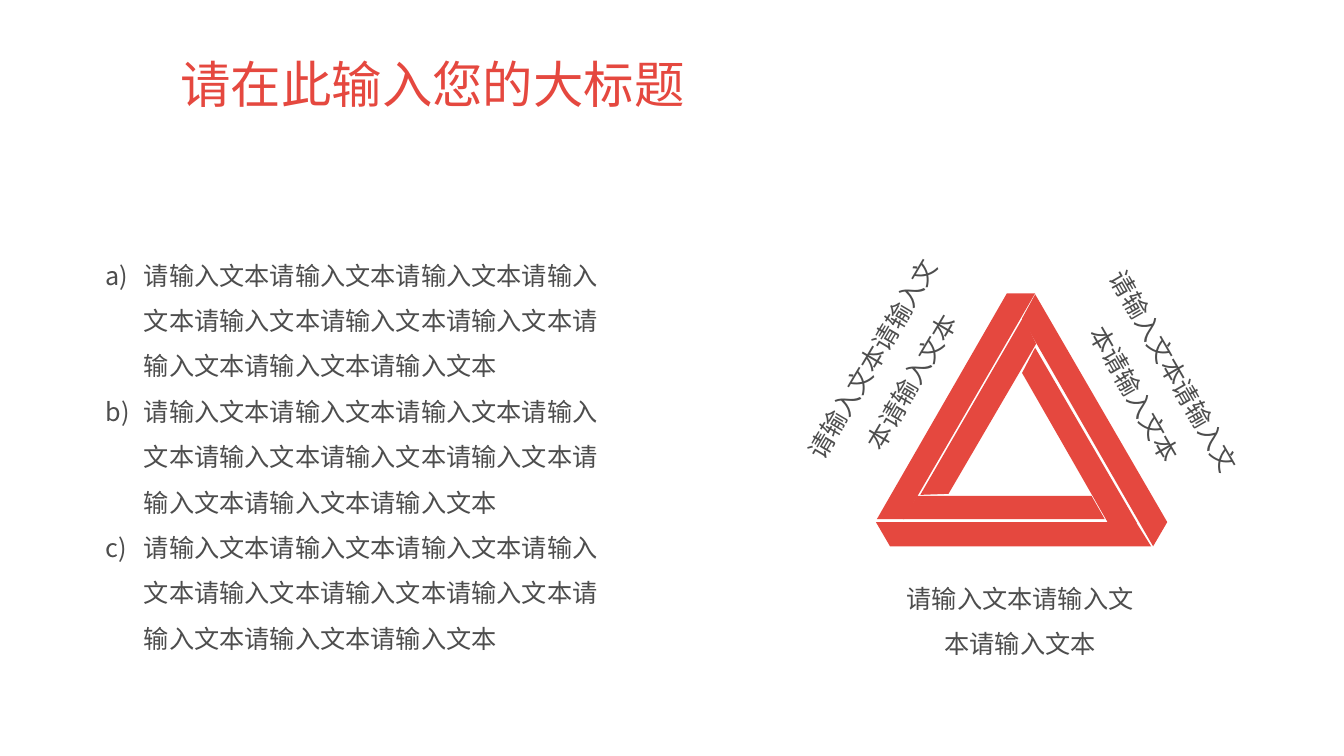
"""Build a slide with a lettered list beside an impossible triangle with three captions."""
from dataclasses import dataclass

from lxml import etree
from pptx import Presentation
from pptx import util as u
from pptx.dml.color import RGBColor
from pptx.enum import text
from pptx.oxml import ns

TITLE = "请在此输入您的大标题"
PHRASE = "请输入文本"
LIST_ITEMS = [PHRASE * 10] * 3
CAPTION = PHRASE * 3

SLIDE_SIZE = (7.5 * 16 / 9, 7.5)
TITLE_BOX = (1.69, 0.4, 10.44, 0.93)
LIST_BOX = (0.95, 2.22, 5.17, 4.47)
LIST_INDENT = 0.38
CAPTION_SIZE = (2.6, 1.15)
CAPTION_PLACES = [
    (8.82, 5.51, 0),
    (10.22, 3.18, 60),
    (7.48, 3.06, 300.5),
]
UNITS_PER_INCH = 100
TRIANGLE_BARS = {
    "left outer": [(1027, 291), (897, 515), (870, 515), (999, 291)],
    "bottom inner": [(910, 492), (1083, 492), (1096, 515), (896, 515)],
    "right outer": [(1027, 292), (1158, 518), (1144, 542), (1014, 316)],
    "left inner": [(1015, 315), (1028, 341), (941, 490), (913, 491)],
    "bottom outer": [(869, 518), (1127, 518), (1142, 542), (883, 542)],
    "right inner": [(1027, 345), (1128, 519), (1100, 520), (1014, 370)],
}


@dataclass(frozen=True)
class Theme:
    accent: RGBColor = RGBColor(0xE5, 0x48, 0x3F)
    body: RGBColor = RGBColor(0x4D, 0x4D, 0x4D)
    font: str = "Noto Sans CJK SC"
    title_size: int = 36
    body_size: int = 18


THEME = Theme()


def style(paragraph, size, color, align, spacing):
    paragraph.alignment = align
    paragraph.line_spacing = spacing
    font = paragraph.font
    font.size = u.Pt(size)
    font.color.rgb = color
    font.name = THEME.font
    defaults = paragraph._p.pPr.find(ns.qn("a:defRPr"))
    etree.SubElement(defaults, ns.qn("a:ea"), typeface=THEME.font)


def add_letter(paragraph):
    properties = paragraph._p.get_or_add_pPr()
    indent = u.Inches(LIST_INDENT)
    properties.set("marL", str(indent))
    properties.set("indent", str(-indent))
    etree.SubElement(properties, ns.qn("a:buAutoNum"), type="alphaLcParenR")


def set_frame(shape):
    frame = shape.text_frame
    frame.word_wrap = True
    frame.auto_size = text.MSO_AUTO_SIZE.NONE
    frame.vertical_anchor = text.MSO_ANCHOR.MIDDLE
    return frame


def add_title(slide):
    title = slide.shapes.title
    title.left, title.top, title.width, title.height = map(u.Inches, TITLE_BOX)
    frame = set_frame(title)
    frame.text = TITLE
    style(frame.paragraphs[0], THEME.title_size, THEME.accent, text.PP_ALIGN.LEFT, 0.9)


def add_text(slide, box, lines, align, lettered=False):
    shape = slide.shapes.add_textbox(*map(u.Inches, box))
    frame = set_frame(shape)
    frame.text = "\n".join(lines)
    for paragraph in frame.paragraphs:
        if lettered:
            add_letter(paragraph)
        style(paragraph, THEME.body_size, THEME.body, align, 1.5)
    return shape


def add_bar(slide, points):
    builder = slide.shapes.build_freeform(*points[0], scale=u.Inches(1) / UNITS_PER_INCH)
    builder.add_line_segments(points[1:], close=True)
    bar = builder.convert_to_shape()
    bar.shadow.inherit = False
    bar.fill.solid()
    bar.fill.fore_color.rgb = THEME.accent
    bar.line.fill.background()


def main():
    presentation = Presentation()
    presentation.slide_width, presentation.slide_height = map(u.Inches, SLIDE_SIZE)
    slide = presentation.slides.add_slide(presentation.slide_layouts[5])
    add_title(slide)
    for points in TRIANGLE_BARS.values():
        add_bar(slide, points)
    for left, top, angle in CAPTION_PLACES:
        caption = add_text(slide, (left, top, *CAPTION_SIZE), [CAPTION], text.PP_ALIGN.CENTER)
        caption.rotation = angle
    add_text(slide, LIST_BOX, LIST_ITEMS, text.PP_ALIGN.LEFT, lettered=True)
    presentation.save("out.pptx")


if __name__ == "__main__":
    main()
